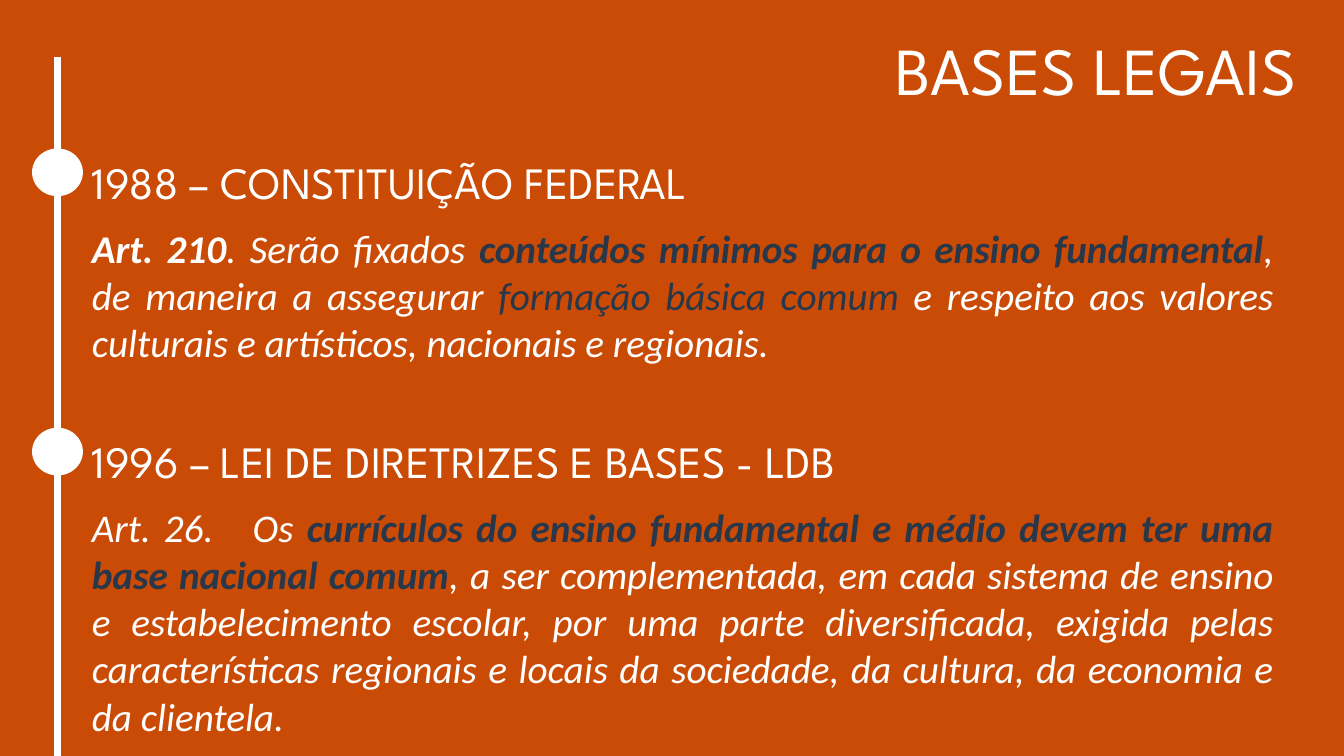
from lxml import etree
from pptx import Presentation
from pptx.dml.color import RGBColor
from pptx.enum.shapes import MSO_CONNECTOR, MSO_SHAPE
from pptx.enum.text import MSO_ANCHOR, MSO_AUTO_SIZE, PP_ALIGN
from pptx.oxml.ns import qn
from pptx.util import Inches, Pt

OVAL = MSO_SHAPE.OVAL
STRAIGHT = MSO_CONNECTOR.STRAIGHT
TOP = MSO_ANCHOR.TOP
FIXED_SIZE = MSO_AUTO_SIZE.NONE
LEFT, RIGHT, JUSTIFY = PP_ALIGN.LEFT, PP_ALIGN.RIGHT, PP_ALIGN.JUSTIFY

COMPARISON_LAYOUT = 4
GRID = 100  # columns and rows on the slide

ORANGE, WHITE, NAVY = "CA4B05", "FFFFFF", "28374A"
HEADING_FONT, BODY_FONT = "League Spartan", "Calibri"

TIMELINE_X = 4.28
DOT_WIDTH, DOT_HEIGHT = 3.68, 6.13
TEXT_LEFT, TEXT_WIDTH = 6.08, 89.42
HEADING_HEIGHT = 8.53
ARTICLE_OFFSET = 9.27

# Each run of an article: text, colour, bold
LAWS = [
    {
        "top": 19.73,
        "height": 20.13,
        "heading": "1988 – CONSTITUIÇÃO FEDERAL",
        "article": [
            ("Art. 210", WHITE, True),
            (". Serão fixados ", WHITE, False),
            ("conteúdos mínimos para o ensino fundamental", NAVY, True),
            (", de maneira a assegurar ", WHITE, False),
            ("formação básica comum ", NAVY, False),
            ("e respeito aos valores culturais e artísticos, nacionais e "
             "regionais.", WHITE, False),
        ],
    },
    {
        "top": 56.67,
        "height": 32.8,
        "heading": "1996 – LEI DE DIRETRIZES E BASES - LDB",
        "article": [
            ("Art. 26.   Os ", WHITE, False),
            ("currículos do ensino fundamental e médio devem ter uma base "
             "nacional comum", NAVY, True),
            (", a ser complementada, em cada sistema de ensino e "
             "estabelecimento escolar, por uma parte diversificada, exigida "
             "pelas características regionais e locais da sociedade, da "
             "cultura, da economia e da clientela.", WHITE, False),
        ],
    },
]


def color(hex_string):
    return RGBColor.from_string(hex_string)


class TimelineSlide:
    """Draws on one slide, with lengths in grid columns and rows."""

    def __init__(self, presentation):
        self.column = presentation.slide_width / GRID
        self.row = presentation.slide_height / GRID
        layout = presentation.slide_layouts[COMPARISON_LAYOUT]
        self.slide = presentation.slides.add_slide(layout)
        fill = self.slide.background.fill
        fill.solid()
        fill.fore_color.rgb = color(ORANGE)

    def x(self, columns):
        return round(columns * self.column)

    def y(self, rows):
        return round(rows * self.row)

    def axis(self, x, top, bottom):
        line = self.slide.shapes.add_connector(
            STRAIGHT, self.x(x), self.y(top), self.x(x), self.y(bottom))
        line.line.color.rgb = color(WHITE)
        line.line.width = Pt(4.5)
        etree.SubElement(line._element.spPr, qn("a:effectLst"))

    def dot(self, center_x, top):
        shape = self.slide.shapes.add_shape(
            OVAL, self.x(center_x - DOT_WIDTH / 2), self.y(top),
            self.x(DOT_WIDTH), self.y(DOT_HEIGHT))
        shape.shadow.inherit = False
        shape.fill.solid()
        shape.fill.fore_color.rgb = color(WHITE)
        shape.line.color.rgb = color(WHITE)
        shape.line.width = Pt(1)

    def text(self, index, left, top, width, height, runs, font, size,
             alignment=LEFT, italic=False):
        """Fills the placeholder with this index with one plain paragraph."""
        shape = self.slide.placeholders[index]
        shape.left, shape.top = self.x(left), self.y(top)
        shape.width, shape.height = self.x(width), self.y(height)
        frame = shape.text_frame
        frame.word_wrap = True
        frame.auto_size = FIXED_SIZE
        frame.vertical_anchor = TOP
        paragraph = frame.paragraphs[0]
        paragraph.alignment = alignment
        paragraph.space_before = Pt(0)
        properties = paragraph._p.get_or_add_pPr()
        properties.set("marL", "0")
        properties.set("indent", "0")
        etree.SubElement(properties, qn("a:buNone"))
        for words, run_color, bold in runs:
            run = paragraph.add_run()
            run.text = words
            run.font.name = font
            run.font.size = Pt(size)
            run.font.bold = bold
            run.font.italic = italic
            run.font.color.rgb = color(run_color)

    def law(self, number, law):
        """Adds a timeline dot with its heading and article."""
        top = law["top"]
        heading_index = 1 + 2 * number
        self.dot(TIMELINE_X, top)
        self.text(heading_index, TEXT_LEFT, top, TEXT_WIDTH, HEADING_HEIGHT,
                  [(law["heading"], WHITE, False)], HEADING_FONT, 32)
        self.text(heading_index + 1, TEXT_LEFT, top + ARTICLE_OFFSET,
                  TEXT_WIDTH, law["height"], law["article"], BODY_FONT, 28,
                  JUSTIFY, italic=True)


def main():
    presentation = Presentation()
    presentation.slide_width = Inches(13.33)
    presentation.slide_height = Inches(7.5)
    timeline = TimelineSlide(presentation)
    timeline.text(0, 32.18, 3.07, 65.04, 12.13,
                  [("BASES LEGAIS", WHITE, False)], HEADING_FONT, 48, RIGHT)
    timeline.axis(TIMELINE_X, 7.6, GRID)
    for number, law in enumerate(LAWS):
        timeline.law(number, law)
    presentation.save("out.pptx")


if __name__ == "__main__":
    main()
